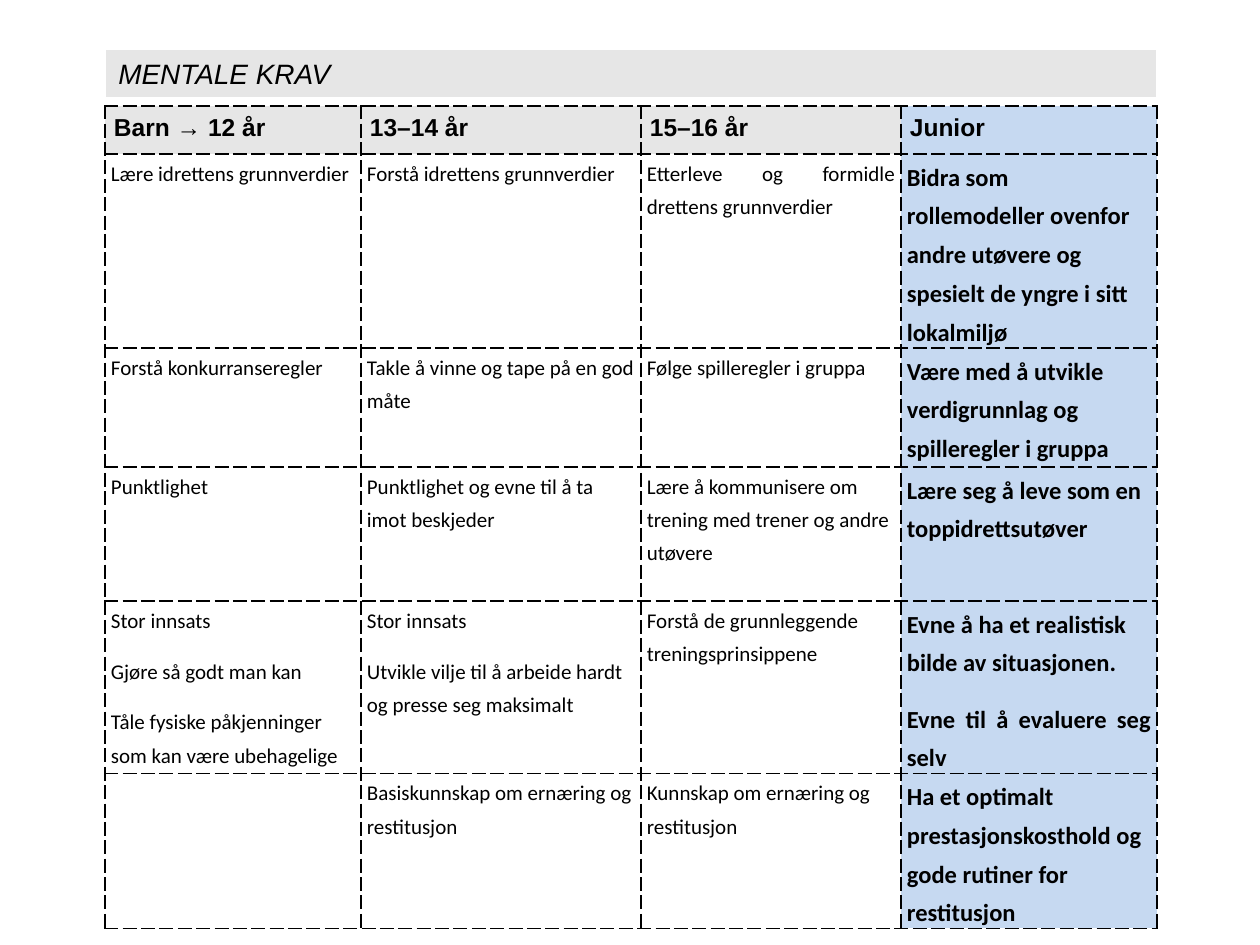
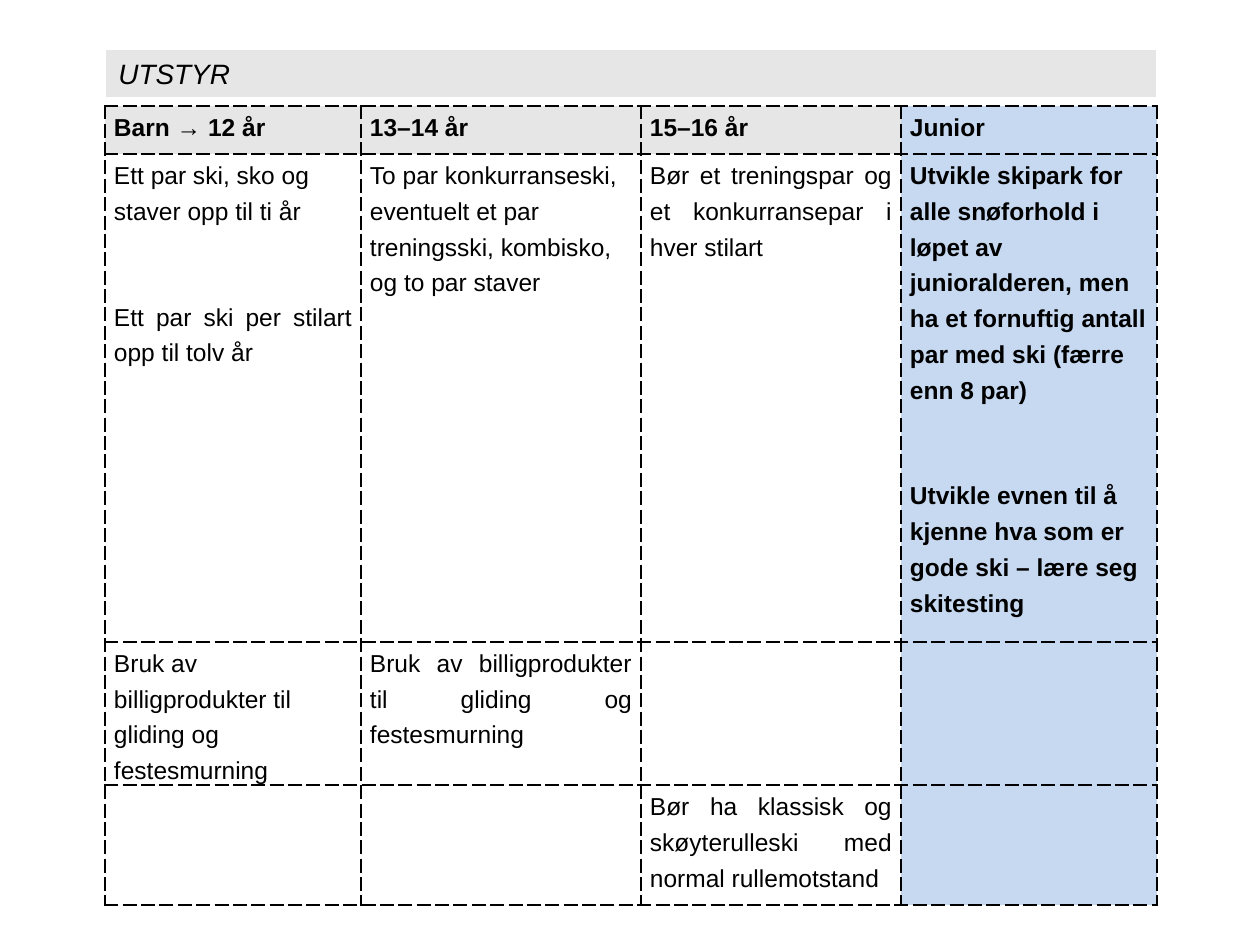
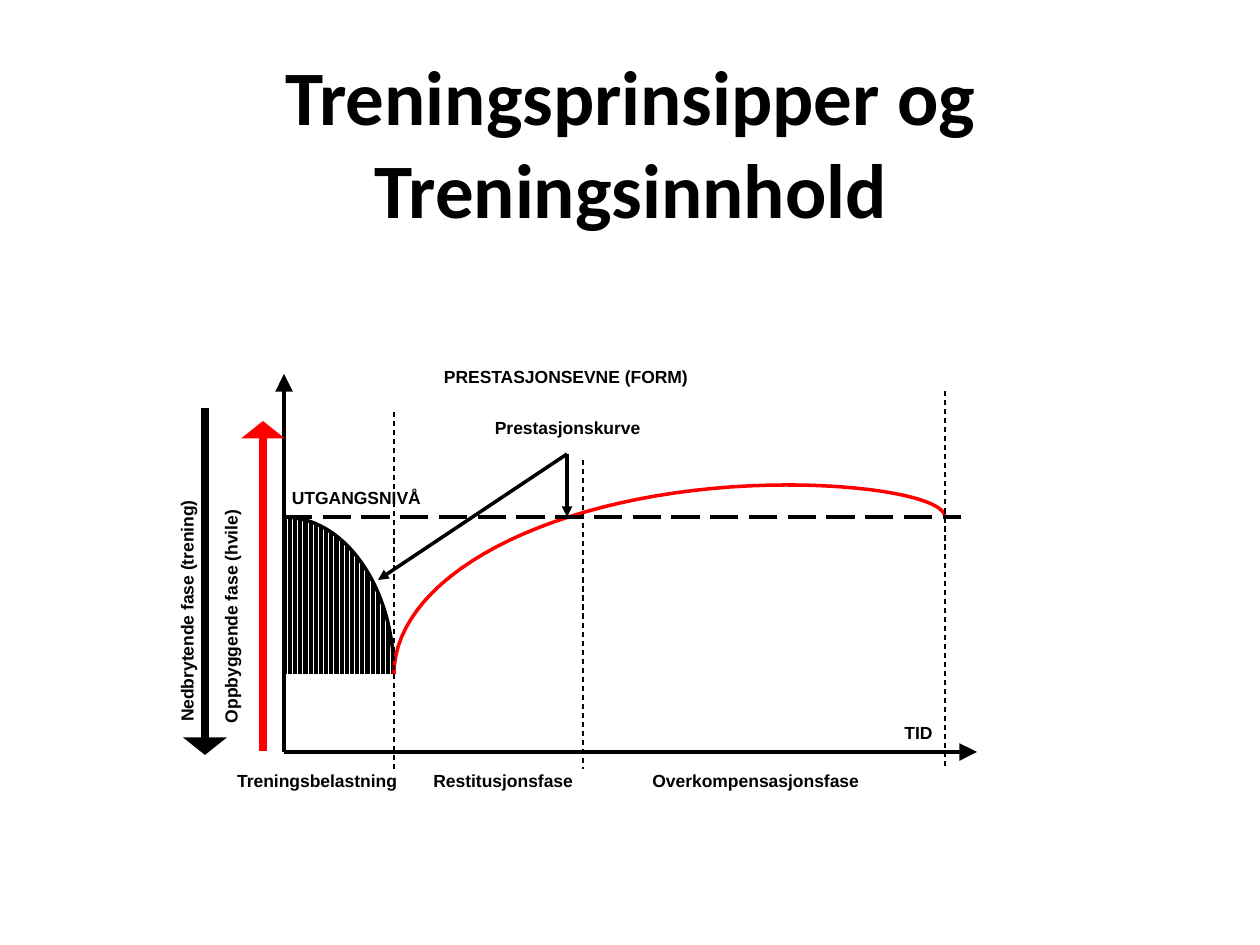
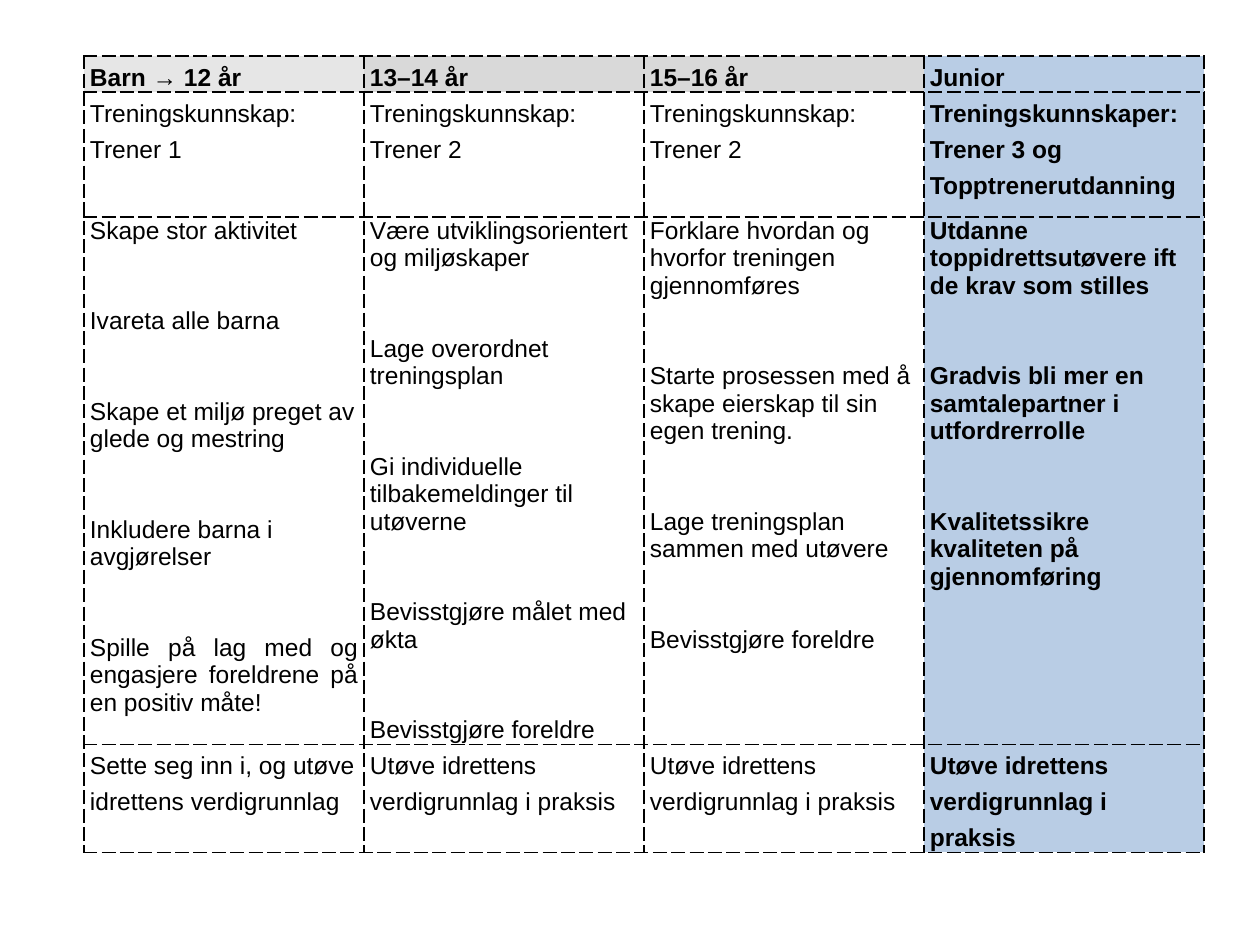
from math import cos, pi, sin

from lxml.etree import SubElement
from pptx import Presentation
from pptx.dml.color import RGBColor
from pptx.enum.dml import MSO_LINE, MSO_PATTERN
from pptx.enum.shapes import MSO_CONNECTOR, MSO_SHAPE
from pptx.enum.text import MSO_ANCHOR, PP_ALIGN
from pptx.oxml.ns import qn
from pptx.util import Emu, Pt

BLACK = RGBColor(0x00, 0x00, 0x00)
WHITE = RGBColor(0xFF, 0xFF, 0xFF)
RED = RGBColor(0xFF, 0x00, 0x00)
GREY = RGBColor(0xE6, 0xE6, 0xE6)
DARK_GREY = RGBColor(0xD9, 0xD9, 0xD9)
LIGHT_BLUE = RGBColor(0xC6, 0xD9, 0xF1)
BLUE = RGBColor(0xB9, 0xCD, 0xE5)

PX_PER_INCH = 126
LEFT, CENTER, JUSTIFY = PP_ALIGN.LEFT, PP_ALIGN.CENTER, PP_ALIGN.JUSTIFY
AGES = ["Barn → 12 år", "13–14 år", "15–16 år", "Junior"]
JUNIOR = len(AGES) - 1

# A cell is a list of paragraphs; a paragraph is a text or (text, alignment).
MENTAL = [
    [["Lære idrettens grunnverdier"],
     ["Forstå idrettens grunnverdier"],
     [("Etterleve og formidle drettens grunnverdier", JUSTIFY)],
     ["Bidra som rollemodeller ovenfor andre utøvere og spesielt de yngre "
      "i sitt lokalmiljø"]],
    [["Forstå konkurranseregler"],
     ["Takle å vinne og tape på en god måte"],
     ["Følge spilleregler i gruppa"],
     ["Være med å utvikle verdigrunnlag og spilleregler i gruppa"]],
    [["Punktlighet"],
     ["Punktlighet og evne til å ta imot beskjeder"],
     ["Lære å kommunisere om trening med trener og andre utøvere"],
     ["Lære seg å leve som en toppidrettsutøver"]],
    [["Stor innsats", "Gjøre så godt man kan",
      "Tåle fysiske påkjenninger som kan være ubehagelige"],
     ["Stor innsats",
      "Utvikle vilje til å arbeide hardt og presse seg maksimalt"],
     ["Forstå de grunnleggende treningsprinsippene"],
     ["Evne å ha et realistisk bilde av situasjonen.",
      ("Evne til å evaluere seg selv", JUSTIFY)]],
    [[],
     ["Basiskunnskap om ernæring og restitusjon"],
     ["Kunnskap om ernæring og restitusjon"],
     ["Ha et optimalt prestasjonskosthold og gode rutiner for restitusjon"]],
]
EQUIPMENT = [
    [["Ett par ski, sko og staver opp til ti år",
      ("Ett par ski per stilart opp til tolv år", JUSTIFY)],
     ["To par konkurranseski, eventuelt et par treningsski, kombisko, "
      "og to par staver"],
     [("Bør et treningspar og et konkurransepar i hver stilart", JUSTIFY)],
     ["Utvikle skipark for alle snøforhold i løpet av junioralderen, men ha "
      "et fornuftig antall par med ski (færre enn 8 par)",
      "Utvikle evnen til å kjenne hva som er gode ski – lære seg skitesting"]],
    [["Bruk av billigprodukter til gliding og festesmurning"],
     [("Bruk av billigprodukter til gliding og festesmurning", JUSTIFY)],
     [], []],
    [[], [],
     [("Bør ha klassisk og skøyterulleski med normal rullemotstand", JUSTIFY)],
     []],
]
COACH = [
    [["Treningskunnskap: Trener 1"],
     ["Treningskunnskap: Trener 2"],
     ["Treningskunnskap: Trener 2"],
     ["Treningskunnskaper: Trener 3 og Topptrenerutdanning"]],
    [["Skape stor aktivitet", "Ivareta alle barna",
      "Skape et miljø preget av glede og mestring",
      "Inkludere barna i avgjørelser",
      ("Spille på lag med og engasjere foreldrene på en positiv måte!", JUSTIFY)],
     ["Være utviklingsorientert og miljøskaper",
      "Lage overordnet treningsplan",
      "Gi individuelle tilbakemeldinger til utøverne",
      "Bevisstgjøre målet med økta",
      ("Bevisstgjøre foreldre", JUSTIFY)],
     ["Forklare hvordan og hvorfor treningen gjennomføres",
      "Starte prosessen med å skape eierskap til sin egen trening.",
      "Lage treningsplan sammen med utøvere",
      ("Bevisstgjøre foreldre", JUSTIFY)],
     ["Utdanne toppidrettsutøvere ift de krav som stilles",
      "Gradvis bli mer en samtalepartner i utfordrerrolle",
      "Kvalitetssikre kvaliteten på gjennomføring"]],
    [["Sette seg inn i, og utøve idrettens verdigrunnlag"]]
    + [["Utøve idrettens verdigrunnlag i praksis"]] * 3,
]

AGE_FILLS = [GREY, GREY, GREY, LIGHT_BLUE]
AGE_COLUMNS = [256, 280, 260, 256]
MENTAL_TABLE = dict(
    rows=MENTAL, at=(105, 106), columns=AGE_COLUMNS, fills=AGE_FILLS,
    heights=[48, 194, 119, 134, 172, 155], font="Calibri", size=12,
    gap=10, head_inset=9, inset=6)
EQUIPMENT_TABLE = dict(
    rows=EQUIPMENT, at=(105, 106), columns=AGE_COLUMNS, fills=AGE_FILLS,
    heights=[48, 488, 143, 120], font="Arial", size=14,
    gap=40, head_inset=9, inset=9)
COACH_TABLE = dict(
    rows=COACH, at=(84, 56), columns=[280] * 4,
    fills=[GREY, DARK_GREY, DARK_GREY, BLUE],
    heights=[36, 125, 525, 108], font="Arial", size=14,
    gap=36, head_inset=6, inset=6, single_spaced=(2,))

# Diagram of form over time, in px
ORIGIN_X, TIME_Y, LEVEL_Y, LOW_Y = 284, 752, 517, 674
LOAD_X, REST_X, PEAK_X, END_X = 394, 583, 788, 945
POINTER = (567, 454)
SOLID, DASH, LONG_DASH = MSO_LINE.SOLID, MSO_LINE.DASH, MSO_LINE.LONG_DASH
AXIS_HEAD, POINTER_HEAD, PHASE_HEAD = ("lg", "lg"), ("med", "med"), ("lg", "sm")

# start, end, colour, points, dash, (head width, head length)
AXES = [
    ((ORIGIN_X, TIME_Y), (ORIGIN_X, 374), BLACK, 2, SOLID, AXIS_HEAD),
    ((ORIGIN_X, TIME_Y), (977, TIME_Y), BLACK, 2, SOLID, AXIS_HEAD),
]
GUIDES = [
    ((ORIGIN_X, LEVEL_Y), (961, LEVEL_Y), BLACK, 2, LONG_DASH, None),
    *[((x, top), (x, 769), BLACK, 0.75, DASH, None)
      for x, top in [(REST_X, 460), (END_X, 391), (LOAD_X, 412)]],
    (POINTER, (378, 580), BLACK, 2, SOLID, POINTER_HEAD),
    (POINTER, (POINTER[0], LEVEL_Y), BLACK, 2, SOLID, POINTER_HEAD),
    ((263, 751), (263, 421), RED, 5, SOLID, PHASE_HEAD),
    ((205, 408), (205, 755), BLACK, 5, SOLID, PHASE_HEAD),
]
# text, box, (side inset, top inset), alignment, turned
LABELS = [
    ("Restitusjonsfase", (369, 761, 268, 55), (13, 6), CENTER, False),
    ("UTGANGSNIVÅ", (289, 483, 301, 63), (3, 1), LEFT, False),
    ("Prestasjonskurve", (457, 413, 221, 63), (3, 1), CENTER, False),
    ("PRESTASJONSEVNE (FORM)", (441, 362, 315, 73), (3, 1), LEFT, False),
    ("Overkompensasjonsfase", (590, 761, 331, 55), (13, 6), CENTER, False),
    ("Treningsbelastning", (212, 761, 210, 55), (13, 6), CENTER, False),
    ("Oppbyggende fase (hvile)", (204, 382, 103, 347), (13, 6), LEFT, True),
    ("Nedbrytende fase (trening)", (160, 381, 78, 347), (13, 6), LEFT, True),
    ("TID", (887, 713, 63, 47), (3, 6), CENTER, False),
]


def px(length):
    return Emu(round(length * 914400 / PX_PER_INCH))


def format_runs(paragraph, font, size, bold=False, italic=False):
    for run in paragraph.runs:
        run.font.name, run.font.size = font, Pt(size)
        run.font.bold, run.font.italic = bold, italic
        run.font.color.rgb = BLACK


def set_insets(frame, side, top):
    """Works for text frames and for table cells."""
    frame.margin_left = frame.margin_right = px(side)
    frame.margin_top = frame.margin_bottom = px(top)


def add_borders(cell):
    properties = cell._tc.get_or_add_tcPr()
    for side in ("a:lnL", "a:lnR", "a:lnT", "a:lnB"):
        border = SubElement(properties, qn(side), w=str(Pt(1)))
        fill = SubElement(border, qn("a:solidFill"))
        SubElement(fill, qn("a:srgbClr"), val=str(BLACK))
        SubElement(border, qn("a:prstDash"), val="dash")


def fill_cell(cell, paragraphs, inset, font, size, bold, gap, spacing):
    set_insets(cell, inset, 0)
    frame = cell.text_frame
    for number, item in enumerate(paragraphs):
        text, alignment = item if isinstance(item, tuple) else (item, LEFT)
        paragraph = frame.add_paragraph() if number else frame.paragraphs[0]
        paragraph.text = text
        paragraph.alignment = alignment
        paragraph.line_spacing = spacing
        paragraph.space_before = Pt(gap if number else 10)
        format_runs(paragraph, font, size, bold)


def add_age_table(slide, rows, at, columns, fills, heights, font, size, gap,
                  head_inset, inset, single_spaced=()):
    table = slide.shapes.add_table(
        len(heights), len(columns), px(at[0]), px(at[1]),
        px(sum(columns)), px(sum(heights))).table
    table.first_row = table.horz_banding = False
    for column, width in zip(table.columns, columns):
        column.width = px(width)
    for row, height in zip(table.rows, heights):
        row.height = px(height)

    header = [[(age, JUSTIFY)] for age in AGES]
    for r, row in enumerate([header] + rows):
        for c, paragraphs in enumerate(row):
            cell = table.cell(r, c)
            add_borders(cell)
            if r == 0 or c == JUNIOR:
                cell.fill.solid()
                cell.fill.fore_color.rgb = fills[c]
            else:
                cell.fill.background()
            spacing = 1.0 if r in single_spaced else 1.3
            if r == 0:
                fill_cell(cell, paragraphs, head_inset, "Arial", 14, True,
                          gap, spacing)
            else:
                fill_cell(cell, paragraphs, inset, font,
                          14 if c == JUNIOR else size, c == JUNIOR,
                          gap, spacing)


def add_band(slide, heading):
    band = slide.shapes.add_shape(
        MSO_SHAPE.RECTANGLE, px(106), px(50), px(1050), px(47))
    band.shadow.inherit = False
    band.fill.solid()
    band.fill.fore_color.rgb = GREY
    band.line.fill.background()
    band.text_frame.text = heading
    paragraph = band.text_frame.paragraphs[0]
    paragraph.alignment = LEFT
    format_runs(paragraph, "Arial", 16, italic=True)


def add_title(slide, title):
    frame = slide.shapes.add_textbox(px(64), px(62), px(1134), px(158)).text_frame
    frame.word_wrap = True
    frame.vertical_anchor = MSO_ANCHOR.MIDDLE
    frame.text = title
    frame.paragraphs[0].alignment = CENTER
    format_runs(frame.paragraphs[0], "Calibri", 44, bold=True)


def add_line(shapes, start, end, color, width, dash, head):
    line = shapes.add_connector(
        MSO_CONNECTOR.STRAIGHT, *map(px, start), *map(px, end))
    SubElement(line._element.spPr, qn("a:effectLst"))
    line.line.color.rgb = color
    line.line.width = Pt(width)
    line.line.dash_style = dash
    if head:
        SubElement(line.line._get_or_add_ln(), qn("a:tailEnd"),
                   type="triangle", w=head[0], len=head[1])


def quarter_arc(center_x, center_y, reach, rise, steps=32):
    """Points from the top of an ellipse to its side; reach < 0 goes left."""
    angles = [pi / 2 * step / steps for step in range(steps + 1)]
    return [(px(center_x + reach * sin(a)), px(center_y - rise * cos(a)))
            for a in angles]


def add_outline(shapes, points, close=False):
    builder = shapes.build_freeform(*points[0])
    builder.add_line_segments(points[1:], close=close)
    outline = builder.convert_to_shape()
    outline.shadow.inherit = False
    return outline


def add_curve(shapes, points, color):
    curve = add_outline(shapes, points)
    curve.fill.background()
    curve.line.color.rgb = color
    curve.line.width = Pt(2)


def add_label(shapes, text, box, insets, alignment, turned):
    frame = shapes.add_textbox(*map(px, box)).text_frame
    frame.word_wrap = True
    set_insets(frame, *insets)
    if turned:
        frame._txBody.bodyPr.set("vert", "vert270")
    frame.text = text
    paragraph = frame.paragraphs[0]
    paragraph.alignment = alignment
    paragraph.line_spacing = 1.15
    paragraph.space_before = paragraph.space_after = Pt(10)
    format_runs(paragraph, "Arial", 10, bold=True)


def add_form_diagram(slide):
    shapes = slide.shapes.add_group_shape().shapes
    for axis in AXES:
        add_line(shapes, *axis)

    peak_y = 485
    breakdown = quarter_arc(ORIGIN_X, LOW_Y, LOAD_X - ORIGIN_X, LOW_Y - LEVEL_Y)
    recovery = quarter_arc(PEAK_X, LOW_Y, LOAD_X - PEAK_X, LOW_Y - peak_y)
    decline = quarter_arc(PEAK_X, LEVEL_Y, END_X - PEAK_X, LEVEL_Y - peak_y)

    load = add_outline(shapes, breakdown + [(px(ORIGIN_X), px(LOW_Y))], close=True)
    load.fill.patterned()
    load.fill.pattern = MSO_PATTERN.DARK_VERTICAL
    load.fill.fore_color.rgb = BLACK
    load.fill.back_color.rgb = WHITE
    load.line.fill.background()

    for points, color in [(breakdown, BLACK), (recovery, RED), (decline, RED)]:
        add_curve(shapes, points, color)
    for guide in GUIDES:
        add_line(shapes, *guide)
    for label in LABELS:
        add_label(shapes, *label)


def main():
    deck = Presentation()
    deck.slide_width, deck.slide_height = px(1260), px(945)
    blank = deck.slide_layouts[6]
    mental, equipment, principles, coach = [
        deck.slides.add_slide(blank) for _ in range(4)]

    add_age_table(mental, **MENTAL_TABLE)
    add_band(mental, "MENTALE KRAV")
    add_age_table(equipment, **EQUIPMENT_TABLE)
    add_band(equipment, "UTSTYR")
    add_title(principles, "Treningsprinsipper og Treningsinnhold")
    add_form_diagram(principles)
    add_age_table(coach, **COACH_TABLE)

    deck.save("out.pptx")


if __name__ == "__main__":
    main()
